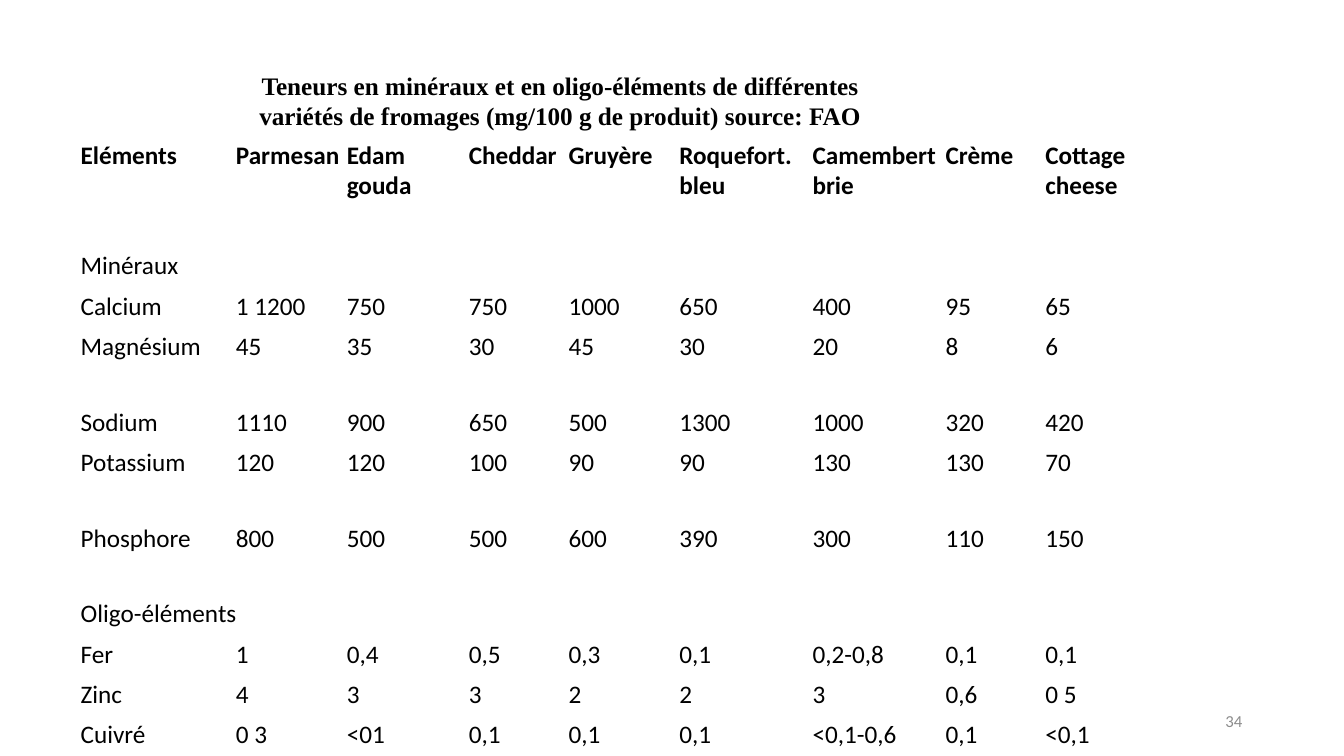
from pptx import Presentation
from pptx.dml.color import RGBColor
from pptx.enum.text import MSO_ANCHOR, PP_ALIGN
from pptx.util import Inches, Pt

HUES = {"ink": "000000", "gray": "8C8C8C"}
TITLE = ("Teneurs en minéraux et en oligo-éléments de différentes "
         "variétés de fromages (mg/100 g de produit) source: FAO")
PAGE = "34"
HEAD = ["Eléments", "Parmesan", "Edam gouda", "Cheddar", "Gruyère",
        "Roquefort. bleu", "Camembert brie", "Crème", "Cottage cheese"]
ROWS = [
    (1.1, HEAD),
    (0.4, ["Minéraux"]),
    (0.4, ["Calcium", "1 1200", "750", "750", "1000", "650", "400", "95", "65"]),
    (0.75, ["Magnésium", "45", "35", "30", "45", "30", "20", "8", "6"]),
    (0.4, ["Sodium", "1110", "900", "650", "500", "1300", "1000", "320", "420"]),
    (0.75, ["Potassium", "120", "120", "100", "90", "90", "130", "130", "70"]),
    (0.75, ["Phosphore", "800", "500", "500", "600", "390", "300", "110", "150"]),
    (0.4, ["Oligo-éléments"]),
    (0.4, ["Fer", "1", "0,4", "0,5", "0,3", "0,1", "0,2-0,8", "0,1", "0,1"]),
    (0.4, ["Zinc", "4", "3", "3", "2", "2", "3", "0,6", "0 5"]),
    (0.4, ["Cuivré", "0 3", "<01", "0,1", "0,1", "0,1", "<0,1-0,6", "0,1", "<0,1"]),
]
COLS = [1.54, 1.1, 1.21, 0.99, 1.1, 1.32, 1.32, 0.99, 1.43]


def write(frame, text, size=18, font="Calibri", hue="ink", bold=False,
          align=PP_ALIGN.LEFT):
    frame.word_wrap = True
    para = frame.paragraphs[0]
    para.alignment = align
    run = para.add_run()
    run.text = text
    run.font.size = Pt(size)
    run.font.name = font
    run.font.bold = bold
    run.font.color.rgb = RGBColor.from_string(HUES[hue])


def add_box(slide, place, text, anchor=MSO_ANCHOR.TOP, **style):
    frame = slide.shapes.add_textbox(*map(Inches, place)).text_frame
    frame.vertical_anchor = anchor
    write(frame, text, **style)


def add_grid(slide, left, top):
    high = sum(row[0] for row in ROWS)
    table = slide.shapes.add_table(
        len(ROWS), len(COLS), Inches(left), Inches(top),
        Inches(sum(COLS)), Inches(high)).table
    table.horz_banding = False
    for col, width in zip(table.columns, COLS):
        col.width = Inches(width)
    for r, (height, texts) in enumerate(ROWS):
        table.rows[r].height = Inches(height)
        for c in range(len(COLS)):
            cell = table.cell(r, c)
            cell.fill.background()
            cell.margin_left = cell.margin_right = Inches(0.02)
            cell.margin_top = cell.margin_bottom = Inches(0.02)
        if len(texts) == 1:
            table.cell(r, 0).merge(table.cell(r, len(COLS) - 1))
        for c, text in enumerate(texts):
            write(table.cell(r, c).text_frame, text, bold=r == 0)


def main():
    deck = Presentation()
    deck.slide_width, deck.slide_height = Inches(13.33), Inches(7.5)
    slide = deck.slides.add_slide(deck.slide_layouts[6])
    add_box(slide, (2.22, 0.65, 6.67, 0.71), TITLE,
            font="Times New Roman", bold=True, align=PP_ALIGN.CENTER)
    add_grid(slide, 0.78, 1.37)
    add_box(slide, (9.42, 6.95, 3, 0.4), PAGE, anchor=MSO_ANCHOR.MIDDLE,
            size=12, hue="gray", align=PP_ALIGN.RIGHT)
    deck.save("out.pptx")


if __name__ == "__main__":
    main()
